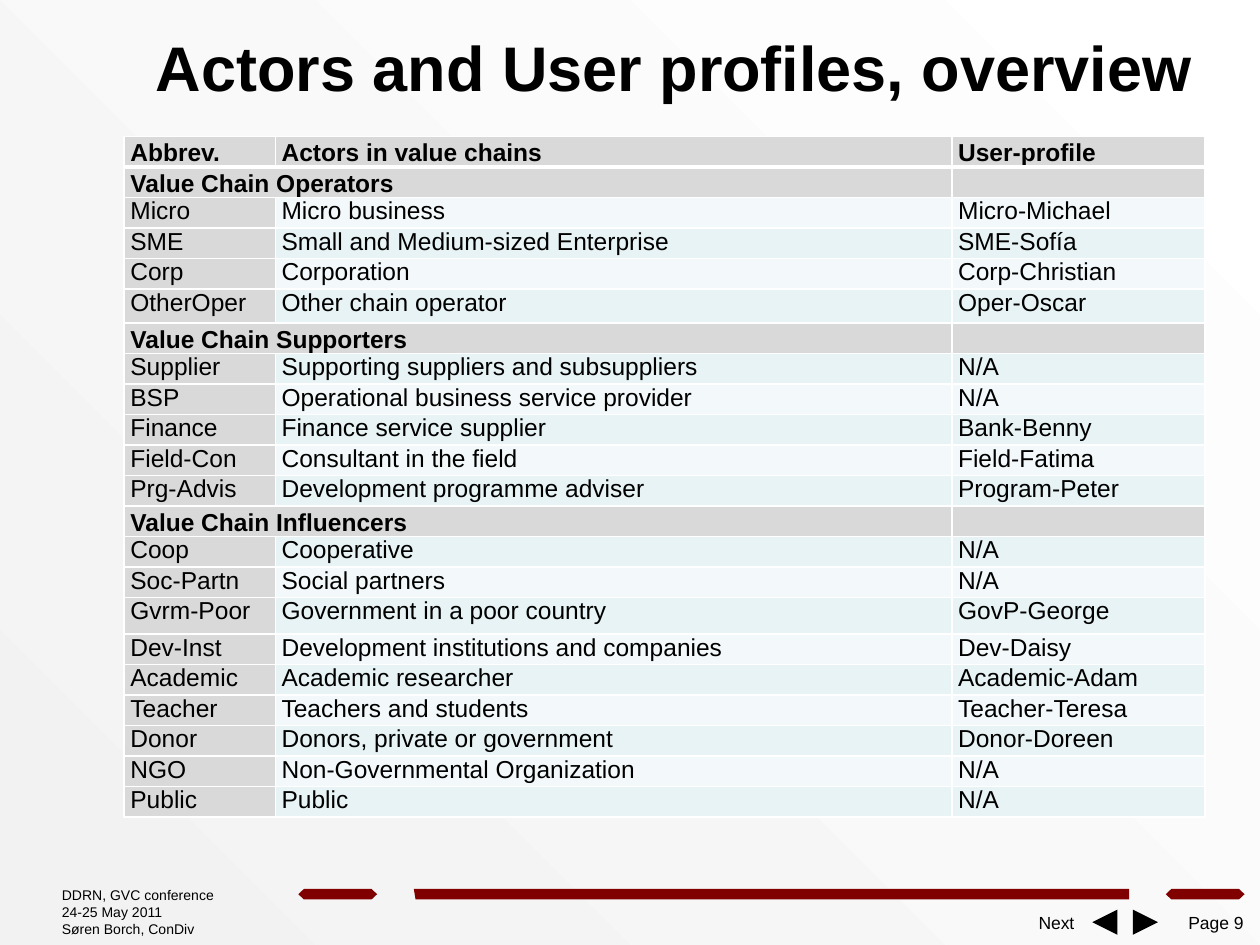
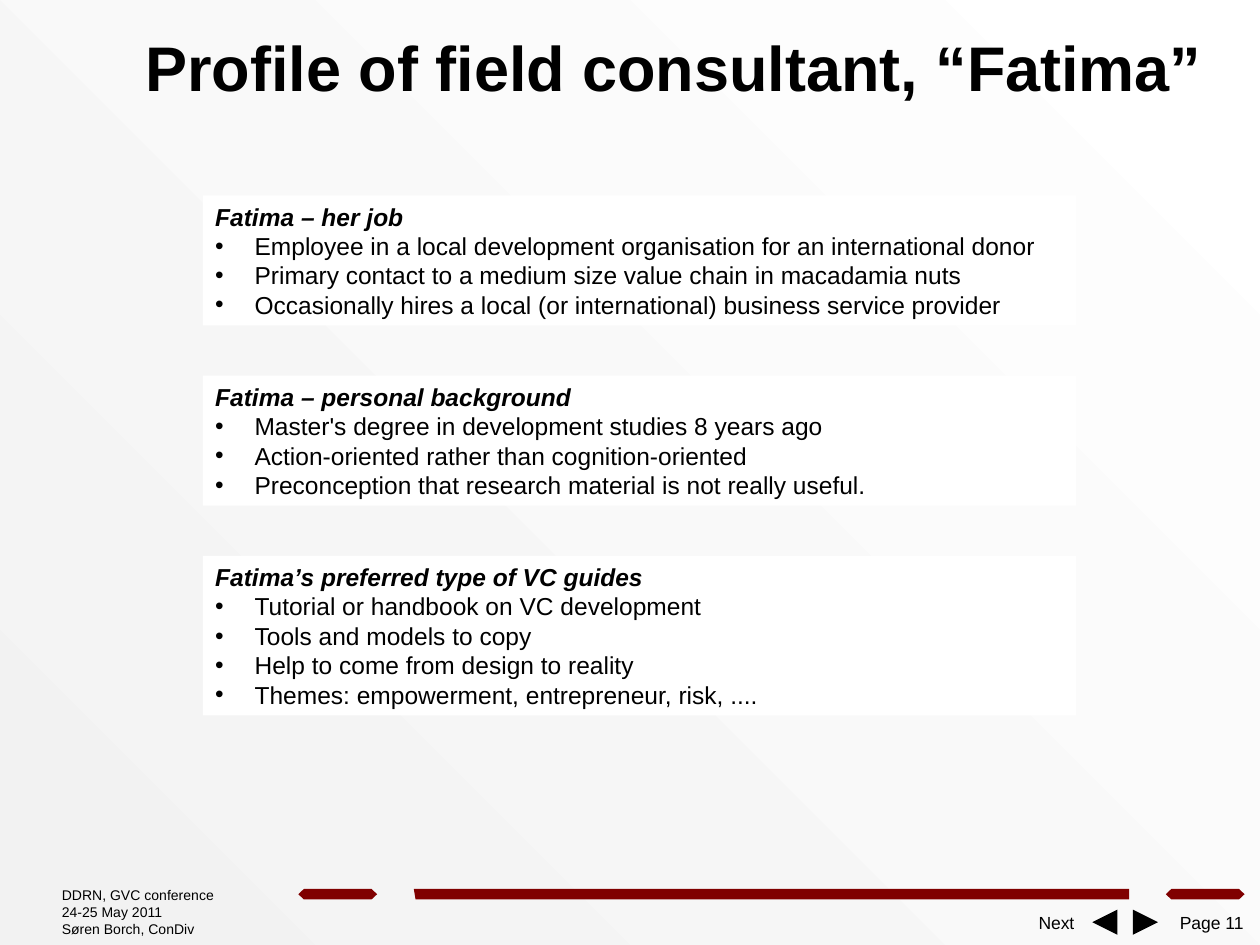
"""Build two slides on value chain actors and the profile of a field consultant."""
from dataclasses import dataclass

from lxml import etree
from pptx import Presentation, oxml
from pptx import util as u
from pptx.dml import color
from pptx.enum import shapes, text
from pptx.oxml import ns

COLORS = {
    "ink": "000000",
    "white": "FFFFFF",
    "backdrop": "F2F2F2",
    "band": "800000",
    "heading": "D9D9D9",
    "even_row": "F3F9FA",
    "odd_row": "E7F3F4",
}
FONT = "Arial"
BODY_SIZE = 14
BAND_TOP, BAND_BOTTOM, BAND_TIP = 508, 514, 3.2
BAND_ENDS = ((170.5, 215.5), (666.2, 711.2))
BAR_LEFT, BAR_RIGHT = 236.5, 645.2
ROW_HEIGHT = 17.46
TALL_ROWS = {"OtherOper": 19.4, "Gvrm-Poor": 20.8}
COLUMN_WIDTHS = (86.4, 386.6, 144.7)
PROFILE_TOP, PROFILE_PITCH = 111.6, 103
LINE_HEIGHT, PROFILE_PADDING = 16.8, 7.2
BULLET_INDENT = 22.5


@dataclass(frozen=True)
class Frame:
    left: float
    top: float
    width: float
    height: float

    def lengths(self) -> tuple:
        return tuple(u.Pt(n) for n in (self.left, self.top, self.width, self.height))


@dataclass(frozen=True)
class Label:
    frame: Frame
    size: float
    align: text.PP_ALIGN = text.PP_ALIGN.LEFT
    anchor: text.MSO_ANCHOR = text.MSO_ANCHOR.TOP
    insets: tuple = (4.3, 3.6)
    bold: bool = False
    wrap: bool = True


@dataclass(frozen=True)
class ActorGroup:
    heading: str
    actors: tuple


@dataclass(frozen=True)
class Profile:
    heading: str
    points: tuple


TITLE = Label(Frame(64.8, 9.4, 640.8, 56.9), 36, text.PP_ALIGN.CENTER,
              text.MSO_ANCHOR.MIDDLE, (7.2, 3.6), bold=True)
PAGE_NUMBER = Label(Frame(652.3, 517.7, 62.6, 19.4), 10, text.PP_ALIGN.RIGHT)
NEXT = Label(Frame(581, 518.4, 45.4, 17.3), 10, text.PP_ALIGN.CENTER,
             text.MSO_ANCHOR.MIDDLE, wrap=False)
EVENT = Label(Frame(31, 506.9, 98.6, 28.8), 8, insets=(4.3, 0), wrap=False)
ARROWS = ((Frame(624.2, 519.8, 14.4, 14.4), 270), (Frame(647.3, 519.8, 14.4, 14.4), 90))

TABLE_HEADER = ("Abbrev.", "Actors in value chains", "User-profile")
ACTOR_GROUPS = (
    ActorGroup("Value Chain Operators", (
        ("Micro", "Micro business", "Micro-Michael"),
        ("SME", "Small and Medium-sized Enterprise", "SME-Sofía"),
        ("Corp", "Corporation", "Corp-Christian"),
        ("OtherOper", "Other chain operator", "Oper-Oscar"),
    )),
    ActorGroup("Value Chain Supporters", (
        ("Supplier", "Supporting suppliers and subsuppliers", "N/A"),
        ("BSP", "Operational business service provider", "N/A"),
        ("Finance", "Finance service supplier", "Bank-Benny"),
        ("Field-Con", "Consultant in the field", "Field-Fatima"),
        ("Prg-Advis", "Development programme adviser", "Program-Peter"),
    )),
    ActorGroup("Value Chain Influencers", (
        ("Coop", "Cooperative", "N/A"),
        ("Soc-Partn", "Social partners", "N/A"),
        ("Gvrm-Poor", "Government in a poor country", "GovP-George"),
        ("Dev-Inst", "Development institutions and companies", "Dev-Daisy"),
        ("Academic", "Academic researcher", "Academic-Adam"),
        ("Teacher", "Teachers and students", "Teacher-Teresa"),
        ("Donor", "Donors, private or government", "Donor-Doreen"),
        ("NGO", "Non-Governmental Organization", "N/A"),
        ("Public", "Public", "N/A"),
    )),
)
PROFILES = (
    Profile("Fatima – her job", (
        "Employee in a local development organisation for an international donor",
        "Primary contact to a medium size value chain in macadamia nuts",
        "Occasionally hires a local (or international) business service provider",
    )),
    Profile("Fatima – personal background", (
        "Master's degree in development studies 8 years ago",
        "Action-oriented rather than cognition-oriented",
        "Preconception that research material is not really useful.",
    )),
    Profile("Fatima’s preferred type of VC guides", (
        "Tutorial or handbook on VC development",
        "Tools and models to copy",
        "Help to come from design to reality",
        "Themes: empowerment, entrepreneur, risk, ....",
    )),
)


def rgb(name: str) -> color.RGBColor:
    return color.RGBColor.from_string(COLORS[name])


def style_runs(para, size: float, bold: bool = False, italic: bool = False) -> None:
    for span in para.runs:
        span.font.name = FONT
        span.font.size = u.Pt(size)
        span.font.bold = bold
        span.font.italic = italic
        span.font.color.rgb = rgb("ink")


def paint(shape, fill: str) -> None:
    shape.shadow.inherit = False
    shape.fill.solid()
    shape.fill.fore_color.rgb = rgb(fill)
    shape.line.fill.background()


def write_label(shape, words: str, label: Label) -> None:
    frame = shape.text_frame
    frame.text = words
    frame.word_wrap = label.wrap
    frame.vertical_anchor = label.anchor
    frame.margin_left = frame.margin_right = u.Pt(label.insets[0])
    frame.margin_top = frame.margin_bottom = u.Pt(label.insets[1])
    for para in frame.paragraphs:
        para.alignment = label.align
        style_runs(para, label.size, label.bold)


def add_label(page, words: str, label: Label) -> None:
    write_label(page.shapes.add_textbox(*label.frame.lengths()), words, label)


def add_outline(page, corners: list) -> None:
    first, *others = [(u.Pt(x), u.Pt(y)) for x, y in corners]
    builder = page.shapes.build_freeform(*first, scale=1.0)
    builder.add_line_segments(others, close=True)
    paint(builder.convert_to_shape(), "band")


def add_footer(page, number: int) -> None:
    middle = (BAND_TOP + BAND_BOTTOM) / 2
    for left, right in BAND_ENDS:
        inner_left, inner_right = left + BAND_TIP, right - BAND_TIP
        add_outline(page, [(left, middle), (inner_left, BAND_TOP), (inner_right, BAND_TOP),
                           (right, middle), (inner_right, BAND_BOTTOM),
                           (inner_left, BAND_BOTTOM)])
    add_outline(page, [(BAR_LEFT, BAND_TOP), (BAR_RIGHT, BAND_TOP),
                       (BAR_RIGHT, BAND_BOTTOM), (BAR_LEFT + 1, BAND_BOTTOM)])
    for frame, rotation in ARROWS:
        arrow = page.shapes.add_shape(shapes.MSO_SHAPE.ISOSCELES_TRIANGLE, *frame.lengths())
        arrow.rotation = rotation
        paint(arrow, "ink")
    button = page.shapes.add_shape(shapes.MSO_SHAPE.BEVEL, *NEXT.frame.lengths())
    button.shadow.inherit = False
    button.fill.background()
    button.line.fill.background()
    write_label(button, "Next", NEXT)
    add_label(page, "DDRN, GVC conference\n24-25 May 2011\nSøren Borch, ConDiv", EVENT)
    add_label(page, f"Page {number}", PAGE_NUMBER)


def add_page(deck, title: str, number: int):
    page = deck.slides.add_slide(deck.slide_layouts[6])
    add_footer(page, number)
    add_label(page, title, TITLE)
    return page


def set_borders(cell, bottom: float) -> None:
    properties = cell._tc.get_or_add_tcPr()
    for place, (side, width) in enumerate((("L", 1), ("R", 1), ("T", 1), ("B", bottom))):
        properties.insert(place, oxml.parse_xml(
            f'<a:ln{side} {ns.nsdecls("a")} w="{u.Pt(width)}"><a:solidFill>'
            f'<a:srgbClr val="{COLORS["white"]}"/></a:solidFill></a:ln{side}>'))


def fill_cell(cell, words: str, fill: str, heading: bool, bottom: float) -> None:
    cell.text = words
    cell.margin_left = cell.margin_right = u.Pt(3.6)
    cell.margin_top = cell.margin_bottom = u.Pt(0)
    cell.vertical_anchor = text.MSO_ANCHOR.BOTTOM if heading else text.MSO_ANCHOR.TOP
    cell.fill.solid()
    cell.fill.fore_color.rgb = rgb(fill)
    set_borders(cell, bottom)
    para = cell.text_frame.paragraphs[0]
    para.alignment = text.PP_ALIGN.LEFT
    style_runs(para, BODY_SIZE, heading)
    if not words:
        etree.SubElement(para._p, ns.qn("a:endParaRPr"), sz=str(BODY_SIZE * 100))


def add_actor_table(page) -> None:
    rows = [TABLE_HEADER]
    heading_rows = {0}
    for group in ACTOR_GROUPS:
        heading_rows.add(len(rows))
        rows += [(group.heading, "", ""), *group.actors]
    heights = [TALL_ROWS.get(row[0], ROW_HEIGHT) for row in rows]
    frame = Frame(70.9, 78, sum(COLUMN_WIDTHS), sum(heights))
    table = page.shapes.add_table(len(rows), len(COLUMN_WIDTHS), *frame.lengths()).table
    table.horz_banding = False
    for column, width in zip(table.columns, COLUMN_WIDTHS):
        column.width = u.Pt(width)
    for index, (row, height) in enumerate(zip(rows, heights)):
        table.rows[index].height = u.Pt(height)
        heading = index in heading_rows
        stripe = "odd_row" if index % 2 else "even_row"
        for place, words in enumerate(row):
            fill = "heading" if heading or place == 0 else stripe
            fill_cell(table.cell(index, place), words, fill, heading, 1 if index else 3)
        if heading and index:
            table.cell(index, 0).merge(table.cell(index, 1))


def add_bullet(para) -> None:
    properties = para._p.get_or_add_pPr()
    properties.set("marL", str(u.Pt(BULLET_INDENT)))
    properties.set("indent", str(-u.Pt(BULLET_INDENT)))
    etree.SubElement(properties, ns.qn("a:buFont"), typeface=FONT)
    etree.SubElement(properties, ns.qn("a:buChar"), char="•")


def add_profile(page, profile: Profile, top: float) -> None:
    lines = (profile.heading, *profile.points)
    frame = Frame(115.9, top, 499, PROFILE_PADDING + LINE_HEIGHT * len(lines))
    box = page.shapes.add_shape(shapes.MSO_SHAPE.RECTANGLE, *frame.lengths())
    paint(box, "white")
    box.text_frame.text = "\n".join(lines)
    box.text_frame.word_wrap = True
    box.text_frame.vertical_anchor = text.MSO_ANCHOR.TOP
    for index, para in enumerate(box.text_frame.paragraphs):
        para.alignment = text.PP_ALIGN.LEFT
        para.line_spacing = u.Pt(LINE_HEIGHT)
        if index:
            add_bullet(para)
        style_runs(para, BODY_SIZE, bold=index == 0, italic=index == 0)


def set_backdrop(deck) -> None:
    fill = deck.slide_master.background.fill
    fill.gradient()
    fill.gradient_angle = 45
    for stop, name, position in zip(fill.gradient_stops, ("backdrop", "white"), (0, 1)):
        stop.color.rgb = rgb(name)
        stop.position = position


def main() -> None:
    deck = Presentation()
    deck.slide_width, deck.slide_height = u.Pt(720), u.Pt(540)
    set_backdrop(deck)
    add_actor_table(add_page(deck, "Actors and User profiles, overview", 9))
    page = add_page(deck, "Profile of field consultant, “Fatima”", 11)
    for index, profile in enumerate(PROFILES):
        add_profile(page, profile, PROFILE_TOP + PROFILE_PITCH * index)
    deck.save("out.pptx")


if __name__ == "__main__":
    main()
